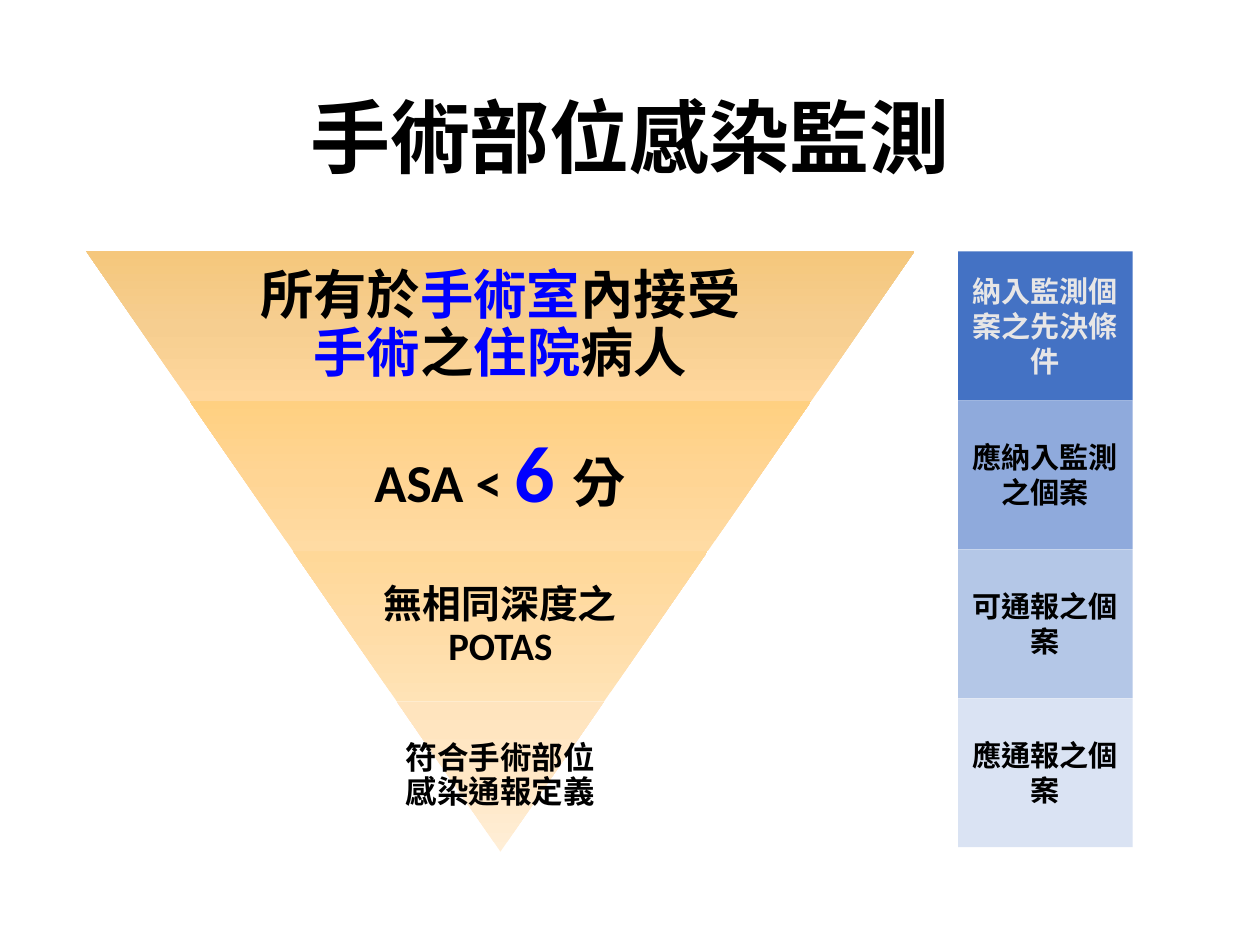
import copy
import pptx
import pptx.util
import pptx.dml.color
import pptx.enum.lang
import pptx.enum.shapes
import pptx.enum.text
import pptx.oxml.ns

Inches = pptx.util.Inches
SHAPE = pptx.enum.shapes.MSO_SHAPE


class Theme:
    font = "Calibri"
    black, blue, pale = "000000", "0000FF", "E7E6E6"
    huge, big, mid, note, small = 66, 44, 32, 26, 24
    bands = [
        ("FFD79D", "F6CE90", "F5C77C"),
        ("FFDBA3", "FFD594", "FFD081"),
        ("FFE3B6", "FFDCA6", "FFD898"),
        ("FFEED6", "FFE7C5", "FFE4BE"),
    ]
    steps = ["4472C4", "8FAADC", "B4C7E7", "DAE3F3"]


TIERS = [
    (6.17, 0.06, Theme.big, [
        ("所有於",), ("手術室", Theme.blue), ("內接受",),
        ("手術", Theme.blue), ("之",), ("住院", Theme.blue), ("病人",)]),
    (4.63, 0.06, Theme.big, [
        ("ASA < ",), ("6 ", Theme.blue, Theme.huge), ("分",)]),
    (3.08, 0.04, Theme.mid, [("無相同深度之POTAS",)]),
    (2.37, 0.04, Theme.note, [("符合手術部位感染通報定義",)]),
]
STEPS = ["納入監測個案之先決條件", "應納入監測之個案", "可通報之個案", "應通報之個案"]


def paint(color):
    return pptx.dml.color.RGBColor.from_string(color)


def write(shape, runs, size, color=Theme.black, inset=None, space=0.9):
    frame = shape.text_frame
    frame.word_wrap = True
    frame.auto_size = pptx.enum.text.MSO_AUTO_SIZE.NONE
    frame.vertical_anchor = pptx.enum.text.MSO_ANCHOR.MIDDLE
    if inset is not None:
        frame.margin_left = frame.margin_right = Inches(inset)
        frame.margin_top = frame.margin_bottom = Inches(inset)
    line = frame.paragraphs[0]
    line.alignment = pptx.enum.text.PP_ALIGN.CENTER
    line.line_spacing = space
    for text, *style in runs:
        run = line.add_run()
        run.text = text
        font = run.font
        font.name, font.bold = Theme.font, True
        font.language_id = pptx.enum.lang.MSO_LANGUAGE_ID.TRADITIONAL_CHINESE
        font.color.rgb = paint(style[0] if style else color)
        font.size = pptx.util.Pt(style[1] if len(style) > 1 else size)


def shade(shape, colors):
    shape.fill.gradient()
    shape.fill.gradient_angle = 270
    stops = shape._element.spPr.find(".//" + pptx.oxml.ns.qn("a:gsLst"))
    stops.append(copy.deepcopy(stops[-1]))
    for i, (stop, color) in enumerate(zip(shape.fill.gradient_stops, colors)):
        stop.position = i / 2
        stop.color.rgb = paint(color)


def block(slide, kind, left, top, width, height):
    shape = slide.shapes.add_shape(
        kind, Inches(left), Inches(top), Inches(width), Inches(height))
    shape.shadow.inherit = False
    shape.line.fill.background()
    return shape


def header(slide, left, top, width, height):
    title = slide.shapes.title
    title.left, title.top = Inches(left), Inches(top)
    title.width, title.height = Inches(width), Inches(height)
    write(title, [("手術部位感染監測",)], Theme.huge)


def funnel(slide, left, top, width, height):
    count = len(TIERS)
    tall = height / count
    slope = width / 2 / height
    mid = left + width / 2
    for i, (wide, inset, size, runs) in enumerate(TIERS):
        span = width * (count - i) / count
        y = top + i * tall
        band = block(slide, SHAPE.TRAPEZOID, mid - span / 2, y, span, tall)
        band.rotation = 180
        band.adjustments[0] = slope
        shade(band, Theme.bands[i])
        label = slide.shapes.add_textbox(
            Inches(mid - wide / 2), Inches(y), Inches(wide), Inches(tall))
        write(label, runs, size, inset=inset)


def ladder(slide, left, top, width, height):
    tall = height / len(STEPS)
    for i, (text, color) in enumerate(zip(STEPS, Theme.steps)):
        step = block(slide, SHAPE.RECTANGLE, left, top + i * tall, width, tall)
        step.fill.solid()
        step.fill.fore_color.rgb = paint(color)
        ink = Theme.black if i else Theme.pale
        write(step, [(text,)], Theme.small, color=ink, space=1.0)


def main():
    deck = pptx.Presentation()
    deck.slide_width, deck.slide_height = Inches(14.44), Inches(10.83)
    slide = deck.slides.add_slide(deck.slide_layouts[5])
    header(slide, 0.99, 0.58, 12.46, 2.09)
    funnel(slide, 0.99, 2.88, 9.49, 6.88)
    ladder(slide, 10.98, 2.88, 2, 6.83)
    deck.save("out.pptx")


if __name__ == "__main__":
    main()
